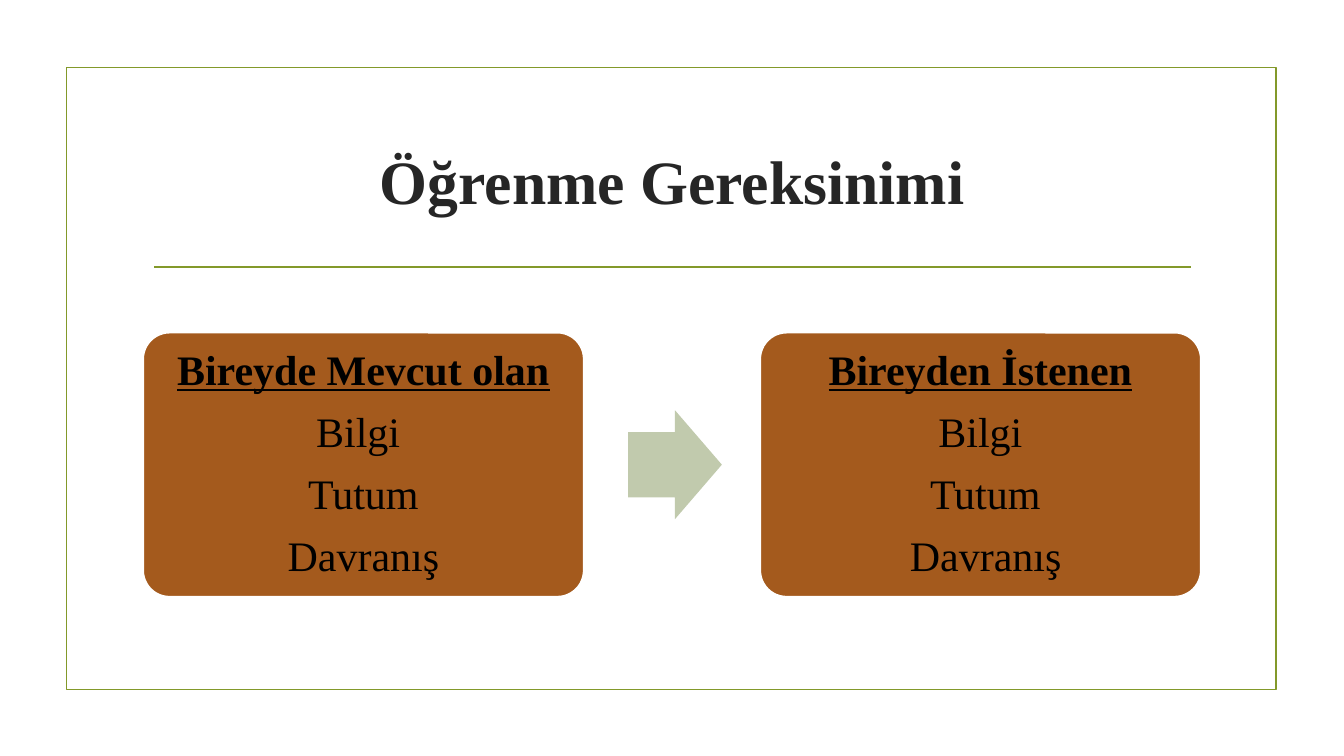
from lxml.etree import SubElement
from pptx import Presentation
from pptx.dml.color import RGBColor
from pptx.enum.shapes import MSO_CONNECTOR, MSO_SHAPE
from pptx.enum.text import MSO_ANCHOR, PP_ALIGN
from pptx.oxml.ns import qn
from pptx.util import Inches, Pt

FONT = "Times New Roman"
OLIVE, RUST, SAGE = "83992A", "A45A1D", "C1CAAD"
WHITE, BLACK, CHARCOAL = "FFFFFF", "000000", "262626"

CARD_WIDTH, CARD_HEIGHT = 4.37, 2.62
ARROW_WIDTH, ARROW_HEIGHT = 0.93, 1.08
STATES = [
    ("Bireyde Mevcut olan", "Bilgi ", "Tutum", "Davranış"),
    ("Bireyden İstenen", "Bilgi", " Tutum", " Davranış"),
]


def color(hex_value):
    return RGBColor.from_string(hex_value)


def format_text(paragraph, hex_value, **values):
    paragraph.alignment = PP_ALIGN.CENTER
    for name, value in {"name": FONT, **values}.items():
        setattr(paragraph.font, name, value)
    paragraph.font.color.rgb = color(hex_value)


def add_block(slide, kind, box, fill=None, line=None, adjustments=()):
    block = slide.shapes.add_shape(kind, *map(Inches, box))
    block.shadow.inherit = False
    for index, value in enumerate(adjustments):
        block.adjustments[index] = value
    if fill:
        block.fill.solid()
        block.fill.fore_color.rgb = color(fill)
    else:
        block.fill.background()
    if line:
        block.line.color.rgb = color(line)
        block.line.width = Pt(1.25)
    else:
        block.line.fill.background()
    return block


def add_frame(slide, box):
    """Border and the rule under the title."""
    left, top, width, _ = box
    add_block(slide, MSO_SHAPE.RECTANGLE, box, line=OLIVE)
    rule_y = Inches(top + 1.98)
    rule = slide.shapes.add_connector(
        MSO_CONNECTOR.STRAIGHT,
        Inches(left + 0.87), rule_y, Inches(left + width - 0.85), rule_y)
    rule.line.color.rgb = color(OLIVE)
    rule.line.width = Pt(1.25)
    SubElement(rule._element.spPr, qn("a:effectLst"))


def add_title(slide, box, text):
    title = slide.shapes.title
    for name, value in zip(("left", "top", "width", "height"), box):
        setattr(title, name, Inches(value))
    title.text_frame.text = text
    title.text_frame.vertical_anchor = MSO_ANCHOR.MIDDLE
    format_text(title.text_frame.paragraphs[0], CHARCOAL, size=Pt(44), bold=True)


def add_card(slide, box, lines):
    card = add_block(slide, MSO_SHAPE.ROUNDED_RECTANGLE, box, RUST, WHITE, [0.1])
    frame = card.text_frame
    frame.word_wrap = True
    frame.vertical_anchor = MSO_ANCHOR.MIDDLE
    for side in ("left", "top", "right", "bottom"):
        setattr(frame, f"margin_{side}", Inches(0.2))
    for index, line in enumerate(lines):
        paragraph = frame.paragraphs[0] if index == 0 else frame.add_paragraph()
        paragraph.text = line
        paragraph.line_spacing = 0.9
        paragraph.space_after = Pt(12)
        heading = index == 0
        format_text(paragraph, BLACK, size=Pt(30), bold=heading, underline=heading)


def add_process(slide, box):
    """Two cards at the ends of the box, with an arrow between them."""
    left, top, width, height = box
    card_top = top + (height - CARD_HEIGHT) / 2
    step = width - CARD_WIDTH
    for index, lines in enumerate(STATES):
        add_card(slide, (left + index * step, card_top, CARD_WIDTH, CARD_HEIGHT), lines)
    arrow_box = (left + (width - ARROW_WIDTH) / 2 + 0.03,
                 top + (height - ARROW_HEIGHT) / 2, ARROW_WIDTH, ARROW_HEIGHT)
    add_block(slide, MSO_SHAPE.RIGHT_ARROW, arrow_box, SAGE, adjustments=[0.6, 0.5])


def main():
    presentation = Presentation()
    presentation.slide_width = Inches(13.33)
    presentation.slide_height = Inches(7.5)
    slide = presentation.slides.add_slide(presentation.slide_layouts[5])
    add_frame(slide, (0.66, 0.67, 12, 6.17))
    add_title(slide, (1.42, 1.07, 10.5, 1.43), "Öğrenme Gereksinimi")
    add_process(slide, (1.42, 3.3, 10.49, 2.62))
    presentation.save("out.pptx")


if __name__ == "__main__":
    main()
